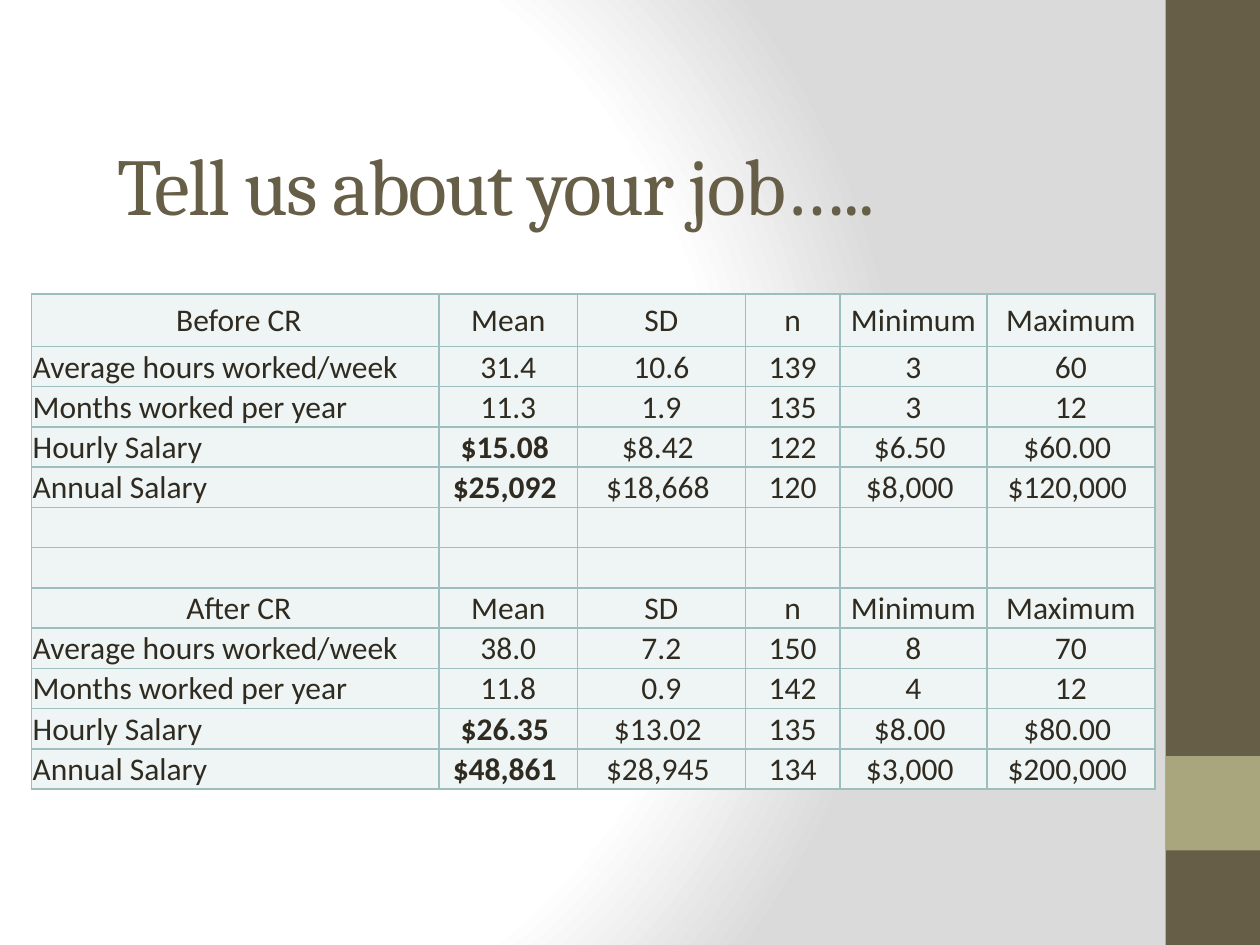
from dataclasses import dataclass

from lxml import etree
from pptx import Presentation
from pptx.dml.color import RGBColor
from pptx.enum import shapes, text
from pptx.oxml import ns
from pptx.util import Pt


@dataclass(frozen=True)
class Theme:
    brown: str = "675E47"
    olive: str = "A9A57C"
    ink: str = "2F2B20"
    cell: str = "EFF4F4"
    border: str = "9CBEBD"
    backdrop: tuple = ((0, "FFFFFF"), (75, "FFFFFF"), (100, "DADADA"))
    title_font: str = "Cambria"
    body_font: str = "Calibri"
    title_size: float = 46
    body_size: float = 18


T = Theme()
COLS = (233, 79, 96, 54, 84, 96)
ROWS = (30,) + (23,) * 11
HEADS = ("Mean", "SD", "n", "Minimum", "Maximum")
LABELS = ("Average hours worked/week", "Months worked per year",
          "Hourly Salary", "Annual Salary")
BEFORE = (
    ("31.4", "10.6", "139", "3", "60"),
    ("11.3", "1.9", "135", "3", "12"),
    ("$15.08 ", "$8.42 ", "122", "$6.50 ", "$60.00 "),
    ("$25,092 ", "$18,668 ", "120", "$8,000 ", "$120,000 "),
)
AFTER = (
    ("38.0", "7.2", "150", "8", "70"),
    ("11.8", "0.9", "142", "4", "12"),
    ("$26.35 ", "$13.02 ", "135", "$8.00 ", "$80.00 "),
    ("$48,861 ", "$28,945 ", "134", "$3,000 ", "$200,000 "),
)


def rgb(value):
    return RGBColor.from_string(value)


def apply(obj, **values):
    for name, value in values.items():
        setattr(obj, name, value)


def sub(parent, tag, **attrs):
    return etree.SubElement(parent, ns.qn(tag), attrs)


def add_run(p, words, font, size, color, bold=False):
    r = p.add_run()
    r.text = words
    apply(r.font, name=font, size=Pt(size), bold=bold)
    r.font.color.rgb = rgb(color)
    return r


def set_background(s):
    fill = s.background.fill
    fill.gradient()
    grad = s.background._cSld.bg.bgPr.find(ns.qn("a:gradFill"))
    for child in list(grad):
        grad.remove(child)
    stops = sub(grad, "a:gsLst")
    for pos, color in T.backdrop:
        stop = sub(stops, "a:gs", pos=str(pos * 1000))
        sub(stop, "a:srgbClr", val=color)
    circle = sub(grad, "a:path", path="circle")
    sub(circle, "a:fillToRect", l="20000", t="50000", r="100000", b="50000")


def add_block(s, x, y, w, h, color):
    sp = s.shapes.add_shape(shapes.MSO_SHAPE.RECTANGLE,
                            Pt(x), Pt(y), Pt(w), Pt(h))
    sp.shadow.inherit = False
    sp.fill.solid()
    sp.fill.fore_color.rgb = rgb(color)
    sp.line.fill.background()


def add_title(s, words):
    tf = s.shapes.add_textbox(Pt(60), Pt(60), Pt(576), Pt(90)).text_frame
    apply(tf, word_wrap=True, vertical_anchor=text.MSO_ANCHOR.MIDDLE)
    r = add_run(tf.paragraphs[0], words, T.title_font, T.title_size, T.brown)
    r.font._element.set("spc", "-100")


def add_borders(cell):
    props = cell._tc.get_or_add_tcPr()
    for i, side in enumerate(("a:lnL", "a:lnR", "a:lnT", "a:lnB")):
        ln = etree.Element(ns.qn(side), w=str(Pt(1)))
        sub(sub(ln, "a:solidFill"), "a:srgbClr", val=T.border)
        props.insert(i, ln)


def fill_cell(cell, words, align, bold):
    apply(cell, vertical_anchor=text.MSO_ANCHOR.MIDDLE, margin_left=Pt(0.7),
          margin_right=Pt(0.7), margin_top=Pt(0.7), margin_bottom=0)
    cell.fill.solid()
    cell.fill.fore_color.rgb = rgb(T.cell)
    add_borders(cell)
    if words:
        p = cell.text_frame.paragraphs[0]
        p.alignment = align
        add_run(p, words, T.body_font, T.body_size, T.ink, bold)


def section(name, values):
    return [(name, *HEADS)] + [(label, *row)
                               for label, row in zip(LABELS, values)]


def add_job_table(s, x, y):
    blank = ("",) * len(COLS)
    data = section(" Before CR", BEFORE) + [blank] * 2 + section(" After CR", AFTER)
    frame = s.shapes.add_table(len(ROWS), len(COLS), Pt(x), Pt(y),
                               Pt(sum(COLS)), Pt(sum(ROWS)))
    table = frame.table
    apply(table, first_row=False, horz_banding=False)
    for col, width in zip(table.columns, COLS):
        col.width = Pt(width)
    for row, height, values in zip(table.rows, ROWS, data):
        row.height = Pt(height)
        for c, (cell, words) in enumerate(zip(row.cells, values)):
            is_label = values[0] in LABELS and c == 0
            align = text.PP_ALIGN.LEFT if is_label else text.PP_ALIGN.CENTER
            # Mean salaries stand out in bold
            fill_cell(cell, words, align, c == 1 and words.startswith("$"))


def main():
    prs = Presentation()
    apply(prs, slide_width=Pt(720), slide_height=Pt(540))
    s = prs.slides.add_slide(prs.slide_layouts[6])

    # Backdrop and side band
    set_background(s)
    add_block(s, 666, 0, 54, 540, T.brown)
    add_block(s, 666, 432, 54, 54, T.olive)

    # Title and salary table
    add_title(s, "Tell us about your job…..")
    add_job_table(s, 18, 168)

    prs.save("out.pptx")


if __name__ == "__main__":
    main()
